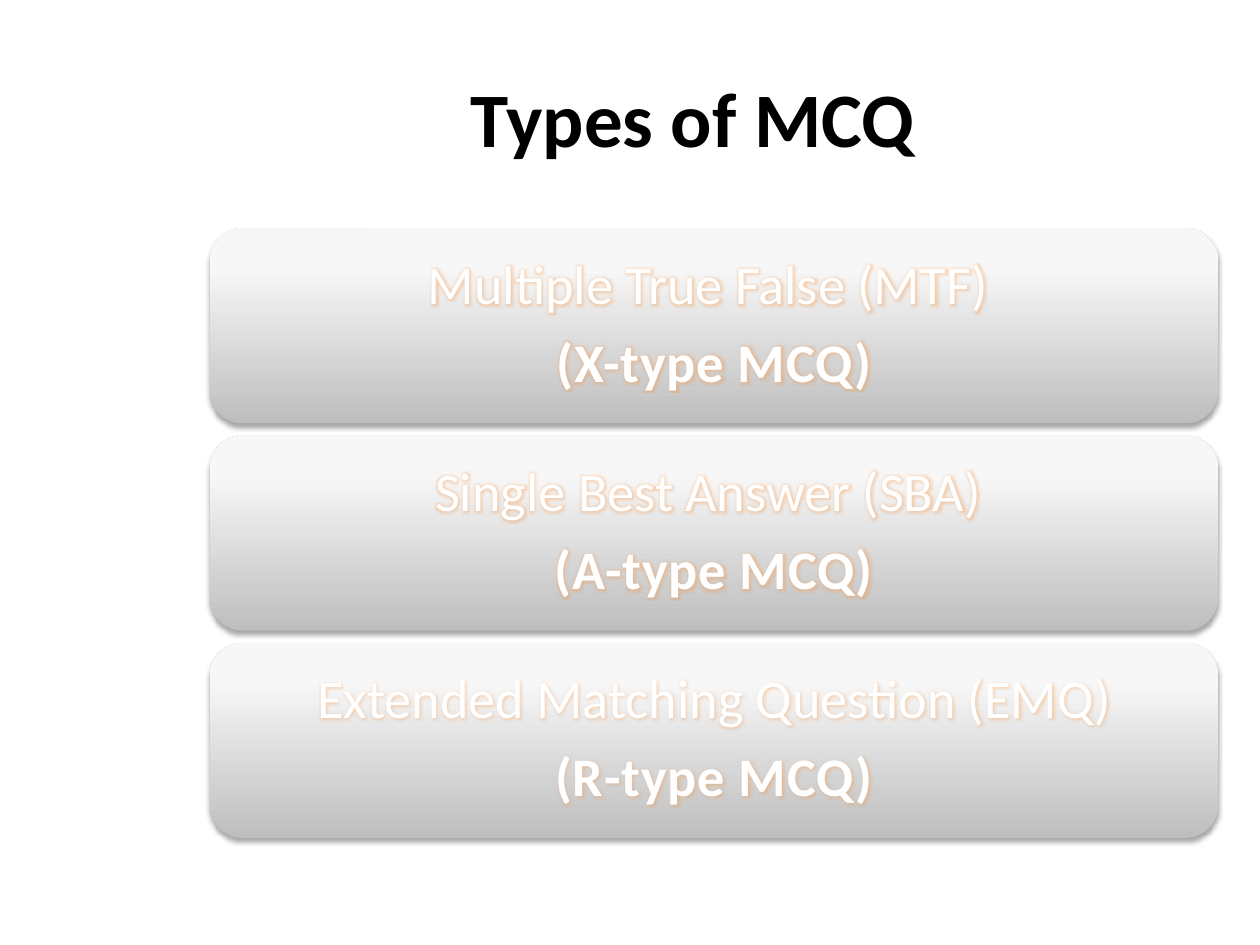
from typing import NamedTuple

from lxml import etree
from pptx import Presentation
from pptx.dml.color import RGBColor
from pptx.enum.shapes import MSO_SHAPE
from pptx.enum.text import MSO_ANCHOR, PP_ALIGN
from pptx.util import Pt

ROUND = MSO_SHAPE.ROUNDED_RECTANGLE
MIDDLE = MSO_ANCHOR.MIDDLE
CENTER = PP_ALIGN.CENTER

BLACK = RGBColor(0x00, 0x00, 0x00)
WHITE = RGBColor(0xFF, 0xFF, 0xFF)
ORANGE = RGBColor(0xF7, 0x96, 0x46)
DARK = RGBColor(0xBE, 0xBE, 0xBE)
PALE = RGBColor(0xF7, 0xF7, 0xF7)
LIGHT = RGBColor(0xF8, 0xF8, 0xF8)

FONT = "Calibri"
NS = "http://schemas.openxmlformats.org/drawingml/2006/main"

# Card column, in points
LEFT, TOP, WIDTH, HEIGHT, PITCH = 120, 130.4, 576, 111.6, 118.4
INSET = 9.3


class Card(NamedTuple):
    name: str
    code: str


CARDS = [
    Card("Multiple True False (MTF) ", "(X-type MCQ)"),
    Card("Single Best Answer (SBA) ", "(A-type MCQ)"),
    Card("Extended Matching Question (EMQ)", "(R-type MCQ)"),
]


def node(body: str):
    """Parse one drawing element, given without its prefix binding."""
    tag, rest = body.split(">", 1)
    return etree.fromstring(f'{tag} xmlns:a="{NS}">{rest}')


def shade(shape) -> None:
    """Give a shape the upward grey gradient and a soft drop shadow."""
    shape.line.fill.background()
    shape.fill.background()
    props = shape.fill._xPr
    old = props.find(f"{{{NS}}}noFill")
    stops = "".join(
        f'<a:gs pos="{pos * 1000}"><a:srgbClr val="{color}"/></a:gs>'
        for pos, color in ((0, DARK), (80, PALE), (100, LIGHT))
    )
    props.replace(old, node(
        f'<a:gradFill rotWithShape="1"><a:gsLst>{stops}</a:gsLst>'
        '<a:lin ang="16200000" scaled="0"/></a:gradFill>'))
    props.append(node(
        f'<a:effectLst><a:outerShdw blurRad="{Pt(3.1)}" dist="{Pt(1.8)}" '
        'dir="5400000" rotWithShape="0">'
        f'<a:srgbClr val="{BLACK}"><a:alpha val="35000"/></a:srgbClr>'
        '</a:outerShdw></a:effectLst>'))


def write(para, text: str, size: float, color: RGBColor, bold: bool):
    """Add one centred run to a paragraph."""
    para.alignment = CENTER
    run = para.add_run()
    run.text = text
    font = run.font
    font.name, font.size, font.bold = FONT, Pt(size), bold
    font.color.rgb = color
    return run


def glow(run) -> None:
    """Put a faint orange glow round the letters."""
    props = run.font._element
    fill = props.find(f"{{{NS}}}solidFill")
    fill.addnext(node(
        f'<a:effectLst><a:glow rad="{Pt(3.6)}"><a:srgbClr val="{ORANGE}">'
        '<a:alpha val="35000"/></a:srgbClr></a:glow></a:effectLst>'))


def text_box(slide, left: float, top: float, width: float, height: float):
    box = slide.shapes.add_textbox(Pt(left), Pt(top), Pt(width), Pt(height))
    frame = box.text_frame
    frame.word_wrap = True
    frame.vertical_anchor = MIDDLE
    return frame


def draw_card(slide, card: Card, top: float) -> None:
    area = (LEFT, top, WIDTH, HEIGHT)
    shade(slide.shapes.add_shape(ROUND, *map(Pt, area)))

    frame = text_box(slide, *area)
    frame.margin_left = frame.margin_right = Pt(INSET)
    frame.margin_top = frame.margin_bottom = Pt(INSET)
    name, code = frame.paragraphs[0], frame.add_paragraph()
    for para, text, bold in ((name, card.name, False), (code, card.code, True)):
        para.line_spacing = 0.9
        para.space_after = Pt(10.85)
        run = write(para, text, 31, WHITE, bold)
        glow(run)
        if bold:
            run.font._element.set("spc", "50")


def main() -> None:
    deck = Presentation()
    deck.slide_width, deck.slide_height = Pt(720), Pt(540)
    slide = deck.slides.add_slide(deck.slide_layouts[6])

    # Title
    title = text_box(slide, 108, 21.6, 576, 90)
    write(title.paragraphs[0], "Types of MCQ", 44, BLACK, True)

    # Cards
    for row, card in enumerate(CARDS):
        draw_card(slide, card, TOP + row * PITCH)

    deck.save("out.pptx")


if __name__ == "__main__":
    main()
